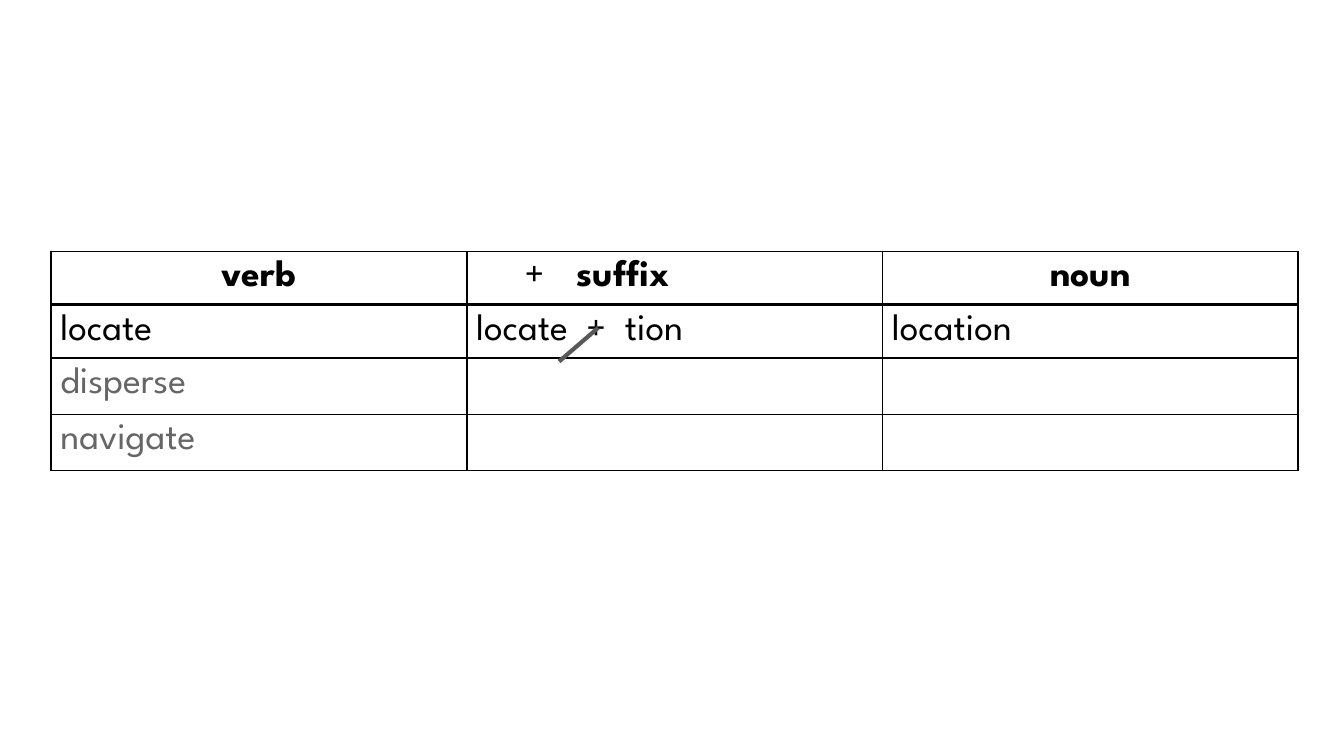
from dataclasses import dataclass

from lxml import etree
from pptx import Presentation
from pptx import util as u
from pptx.dml.color import RGBColor
from pptx.enum import shapes, text
from pptx.oxml import ns


@dataclass(frozen=True)
class Theme:
    font: str = "League Spartan"
    size: float = 20
    ink: str = "000000"
    muted: str = "666666"
    strike: str = "595959"
    thin: float = 1
    thick: float = 2.25
    inset: float = 0.07


THEME = Theme()
HEADINGS = ["verb", "suffix", "noun"]
ROWS = [
    ["locate", "locate  +  tion", "location"],
    ["disperse", "", ""],
    ["navigate", "", ""],
]
ROW_HEIGHTS = [0.39, 0.39, 0.42, 0.42]


def add_element(parent, tag, **attributes):
    element = etree.SubElement(parent, ns.qn(tag))
    for name, value in attributes.items():
        element.set(name, str(value))
    return element


def write_text(frame, content, color=THEME.ink, bold=False, align=text.PP_ALIGN.LEFT, bullet=None):
    paragraph = frame.paragraphs[0]
    paragraph.alignment = align
    if bullet:
        properties = paragraph._p.get_or_add_pPr()
        properties.set("marL", str(u.Inches(0.75)))
        properties.set("indent", str(u.Inches(-0.39)))
        bullet_color = add_element(properties, "a:buClr")
        add_element(bullet_color, "a:srgbClr", val=color)
        add_element(properties, "a:buFont", typeface=THEME.font)
        add_element(properties, "a:buChar", char=bullet)
    run = paragraph.add_run()
    run.text = content
    run.font.name = THEME.font
    run.font.size = u.Pt(THEME.size)
    run.font.bold = bold
    run.font.color.rgb = RGBColor.from_string(color)


def set_borders(cell, **widths):
    properties = cell._tc.get_or_add_tcPr()
    for side in "LRTB":
        width = u.Pt(widths.get(side, THEME.thin))
        border = add_element(properties, f"a:ln{side}", w=width)
        fill = add_element(border, "a:solidFill")
        add_element(fill, "a:srgbClr", val=THEME.ink)


def add_word_table(slide, left, top, width):
    frame = slide.shapes.add_table(
        len(ROW_HEIGHTS), len(HEADINGS), u.Inches(left), u.Inches(top),
        u.Inches(width), u.Inches(sum(ROW_HEIGHTS)))
    table = frame.table
    table.first_row = False
    table.horz_banding = False
    for row, height in zip(table.rows, ROW_HEIGHTS):
        row.height = u.Inches(height)
    for row_index, words in enumerate([HEADINGS] + ROWS):
        for column_index, word in enumerate(words):
            cell = table.cell(row_index, column_index)
            set_borders(cell, **{0: {"B": THEME.thick}, 1: {"T": THEME.thick}}.get(row_index, {}))
            cell.fill.background()
            if not word:
                continue
            cell.margin_left = cell.margin_right = u.Inches(THEME.inset)
            cell.margin_top = cell.margin_bottom = u.Inches(THEME.inset)
            header = row_index == 0
            bulleted = word == "suffix"
            write_text(
                cell.text_frame, word, bold=header,
                color=THEME.muted if row_index > 1 else THEME.ink,
                align=text.PP_ALIGN.CENTER if header and not bulleted else text.PP_ALIGN.LEFT,
                bullet="+" if bulleted else None)


def add_strike(slide, left, top, width, height):
    line = slide.shapes.add_connector(
        shapes.MSO_CONNECTOR.STRAIGHT, u.Inches(left), u.Inches(top + height),
        u.Inches(left + width), u.Inches(top))
    line.line.color.rgb = RGBColor.from_string(THEME.strike)
    line.line.width = u.Pt(THEME.thick)
    add_element(line._element.spPr, "a:effectLst")


def main():
    presentation = Presentation()
    presentation.slide_width = u.Inches(10)
    presentation.slide_height = presentation.slide_width * 9 // 16
    slide = presentation.slides.add_slide(presentation.slide_layouts[6])
    add_word_table(slide, 0.38, 1.87, 9.28)
    add_strike(slide, 4.16, 2.44, 0.29, 0.25)
    presentation.save("out.pptx")


if __name__ == "__main__":
    main()
